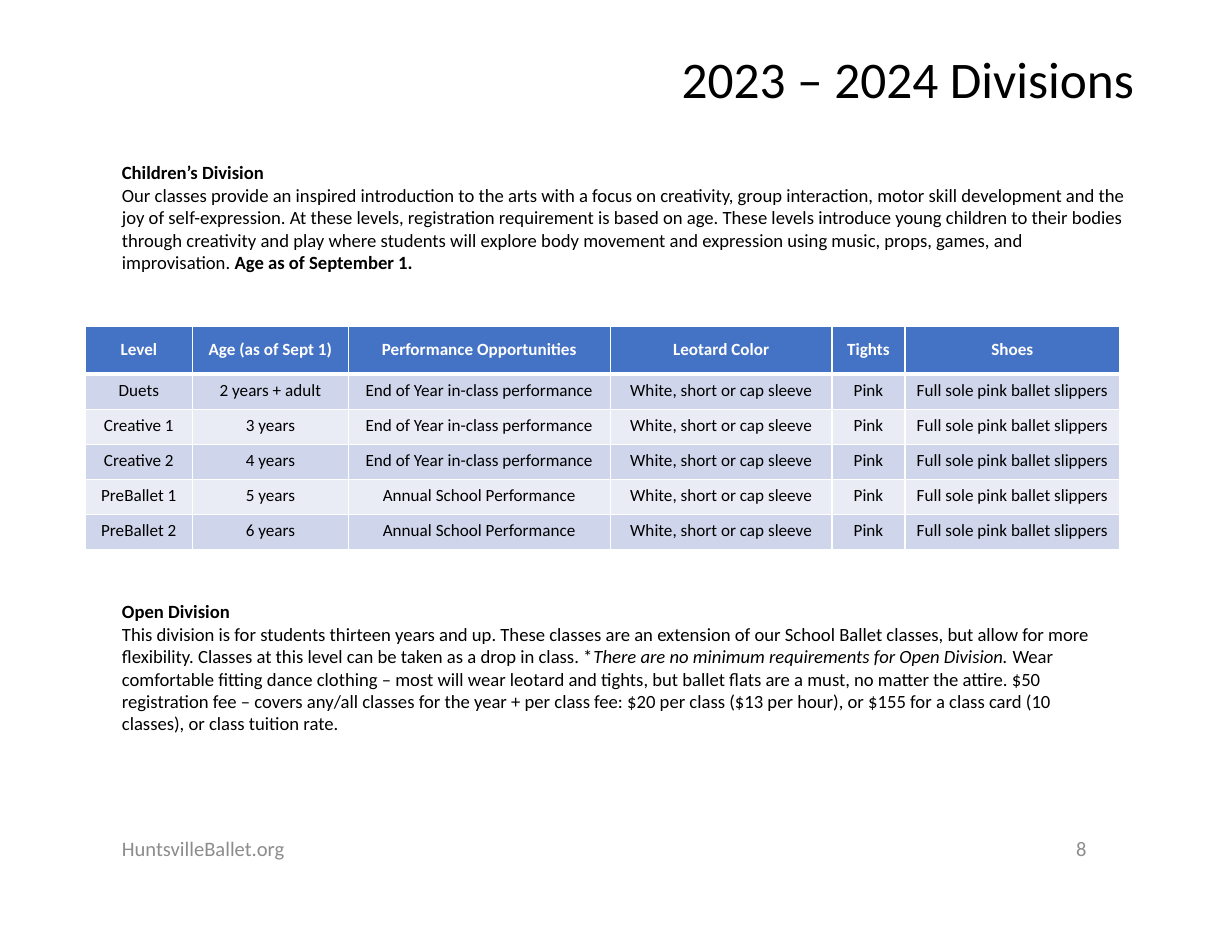
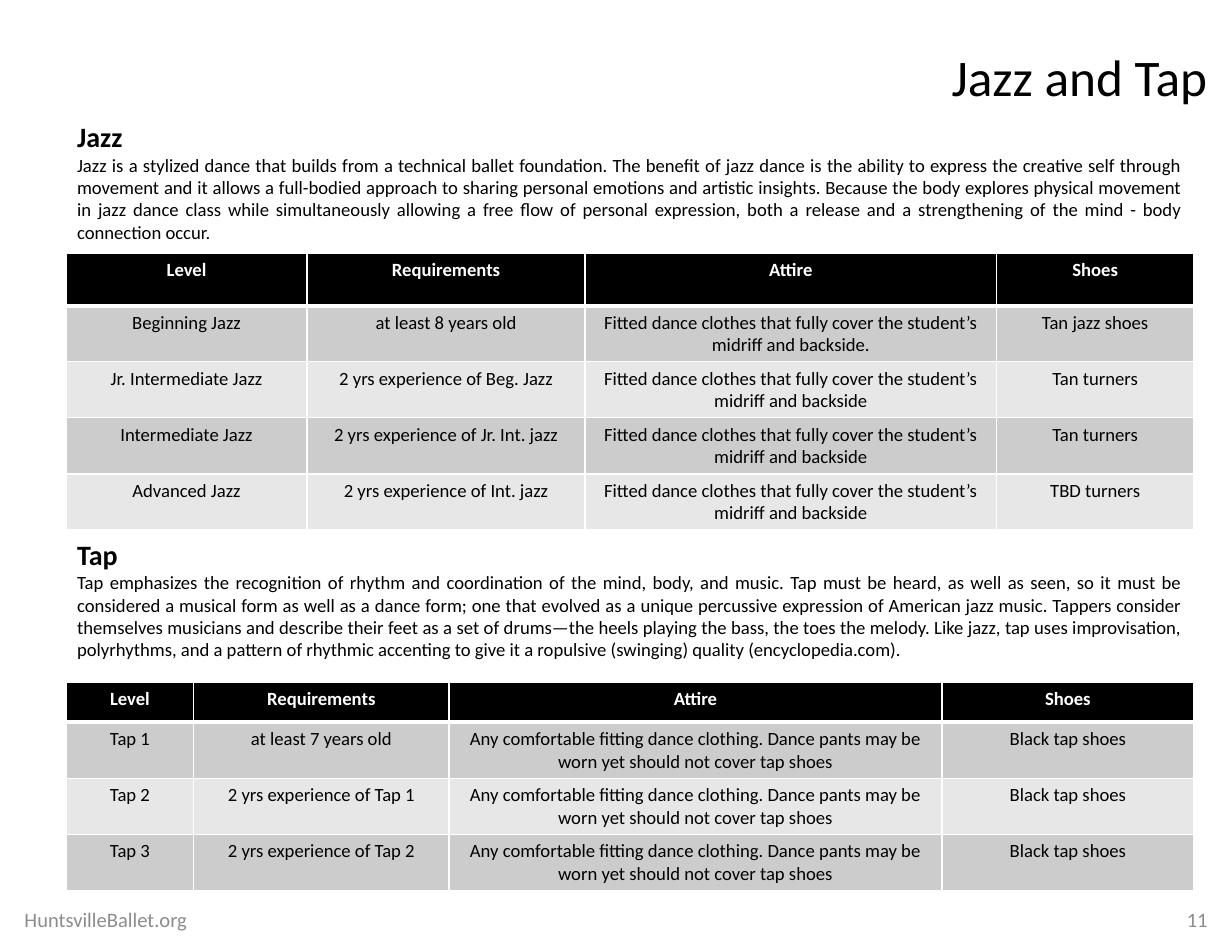
from lxml.etree import SubElement
from pptx import Presentation
from pptx.dml.color import RGBColor
from pptx.enum.text import MSO_ANCHOR, MSO_AUTO_SIZE, PP_ALIGN
from pptx.oxml.ns import qn
from pptx.util import Inches, Pt

BLACK = RGBColor(0x00, 0x00, 0x00)
WHITE = RGBColor(0xFF, 0xFF, 0xFF)
GREY = RGBColor(0x8C, 0x8C, 0x8C)
BLUE_SCHEME = (
    RGBColor(0x44, 0x72, 0xC4),
    RGBColor(0xCF, 0xD5, 0xEA),
    RGBColor(0xE9, 0xEB, 0xF5),
)
BLACK_SCHEME = (BLACK, RGBColor(0xCC, 0xCC, 0xCC), RGBColor(0xE7, 0xE7, 0xE7))

FONT = "Calibri"
GRID = Inches(0.25)
COLUMNS, ROWS = 44, 34
TITLE_ONLY = 5


def on_grid(*lengths):
    return [round(length * GRID) for length in lengths]


class Handbook:
    def __init__(self):
        self.presentation = Presentation()
        self.presentation.slide_width, self.presentation.slide_height = on_grid(COLUMNS, ROWS)
        self.slide = None

    def style(self, paragraph, size, color=BLACK, bold=None, align=PP_ALIGN.LEFT):
        paragraph.alignment = align
        paragraph.font.name = FONT
        paragraph.font.size = Pt(size)
        paragraph.font.color.rgb = color
        paragraph.font.bold = bold

    def add_slide(self, title, place):
        layout = self.presentation.slide_layouts[TITLE_ONLY]
        self.slide = self.presentation.slides.add_slide(layout)
        shape = self.slide.shapes.title
        shape.left, shape.top, shape.width, shape.height = on_grid(*place)
        frame = shape.text_frame
        frame.text = title
        frame.auto_size = MSO_AUTO_SIZE.NONE
        frame.vertical_anchor = MSO_ANCHOR.MIDDLE
        paragraph = frame.paragraphs[0]
        paragraph.line_spacing = 0.9
        self.style(paragraph, 33, align=PP_ALIGN.RIGHT)

    def text_box(self, place, anchor=MSO_ANCHOR.TOP):
        frame = self.slide.shapes.add_textbox(*on_grid(*place)).text_frame
        frame.word_wrap = True
        frame.vertical_anchor = anchor
        return frame

    def footer(self, number, margin, top, height, widths):
        site_width, number_width = widths
        entries = (
            ("HuntsvilleBallet.org", margin[0], site_width, PP_ALIGN.LEFT),
            (number, COLUMNS - margin[1] - number_width, number_width, PP_ALIGN.RIGHT),
        )
        for text, left, width, align in entries:
            frame = self.text_box((left, top, width, height), MSO_ANCHOR.MIDDLE)
            frame.text = text
            self.style(frame.paragraphs[0], 13.2, GREY, align=align)

    def section(self, place, heading, runs, heading_size=12, align=PP_ALIGN.LEFT):
        frame = self.text_box(place)
        frame.text = heading
        self.style(frame.paragraphs[0], heading_size, bold=True)
        paragraph = frame.add_paragraph()
        self.style(paragraph, 12, align=align)
        for text, emphasis in runs:
            run = paragraph.add_run()
            run.text = text
            run.font.bold = emphasis == "bold"
            run.font.italic = emphasis == "italic"

    def borders(self, cell, top, bottom):
        properties = cell._tc.get_or_add_tcPr()
        for side, points in (("lnL", 1), ("lnR", 1), ("lnT", top), ("lnB", bottom)):
            line = SubElement(properties, qn(f"a:{side}"), w=str(Pt(points)))
            fill = SubElement(line, qn("a:solidFill"))
            SubElement(fill, qn("a:srgbClr"), val=str(WHITE))

    def table(self, place, weights, header_height, records, scheme, size=12,
              header_anchor=MSO_ANCHOR.TOP):
        left, top, width, height = on_grid(*place)
        shape = self.slide.shapes.add_table(
            len(records), len(weights), left, top, width, height)
        table = shape.table
        for column, weight in zip(table.columns, weights):
            column.width = round(width * weight / sum(weights))
        header = round(header_height * GRID)
        for index, row in enumerate(table.rows):
            row.height = header if index == 0 else (height - header) // (len(records) - 1)
        header_fill, odd_fill, even_fill = scheme
        for index, record in enumerate(records):
            is_header = index == 0
            fill = header_fill if is_header else odd_fill if index % 2 else even_fill
            for cell, text in zip(table.rows[index].cells, record):
                self.borders(cell, 3 if index == 1 else 1, 3 if is_header else 1)
                cell.fill.solid()
                cell.fill.fore_color.rgb = fill
                cell.vertical_anchor = header_anchor if is_header else MSO_ANCHOR.TOP
                cell.text = text
                self.style(cell.text_frame.paragraphs[0], size,
                           WHITE if is_header else BLACK, is_header, PP_ALIGN.CENTER)


def add_divisions(handbook):
    handbook.add_slide("2023 – 2024 Divisions", (16.2, 0.76, 24.72, 4.32))
    handbook.footer("8", (3.96, 4.8), 29.48, 1.6, (13.52, 9))
    handbook.section((3.96, 5.56, 36.96, 4.44), "Children’s Division", [
        ("Our classes provide an inspired introduction to the arts with a focus on "
         "creativity, group interaction, motor skill development and the joy of "
         "self-expression. At these levels, registration requirement is based on age. "
         "These levels introduce young children to their bodies through creativity and "
         "play where students will explore body movement and expression using music, "
         "props, games, and improvisation. ", None),
        ("Age as of September 1.", "bold"),
    ])
    in_class = "End of Year in-class performance"
    annual = "Annual School Performance"
    levels = [
        ("Duets", "2 years + adult", in_class),
        ("Creative 1", "3 years", in_class),
        ("Creative 2", "4 years", in_class),
        ("PreBallet 1", "5 years", annual),
        ("PreBallet 2", "6 years", annual),
    ]
    attire = ("White, short or cap sleeve", "Pink", "Full sole pink ballet slippers")
    header = ("Level", "Age (as of Sept 1)", "Performance Opportunities",
              "Leotard Color", "Tights", "Shoes")
    handbook.table((3.04, 11.64, 36.96, 8), (0.96, 1.39, 2.34, 1.98, 0.65, 1.92), 1.72,
                   [header] + [level + attire for level in levels],
                   BLUE_SCHEME, 11, MSO_ANCHOR.MIDDLE)
    handbook.section((3.96, 21.24, 36.04, 5.24), "Open Division", [
        ("This division is for students thirteen years and up. These classes are an "
         "extension of our School Ballet classes, but allow for more flexibility. "
         "Classes at this level can be taken as a drop in class. *", None),
        ("There are no minimum requirements for Open Division. ", "italic"),
        ("Wear comfortable fitting dance clothing – most will wear leotard and tights, "
         "but ballet flats are a must, no matter the attire. $50 registration fee – "
         "covers any/all classes for the year + per class fee: $20 per class ($13 per "
         "hour), or $155 for a class card (10 classes), or class tuition rate.", None),
    ])


def add_jazz_and_tap(handbook):
    left, width = 2.36, 40.28
    header = ("Level", "Requirements", "Attire", "Shoes")
    handbook.add_slide("Jazz and Tap", (20.68, 1.04, 22.84, 3.64))
    handbook.footer("11", (0.48, 0.48), 31.92, 1.8, (14.84, 9.92))
    handbook.section((left, 4.08, width, 4.84), "Jazz", [
        ("Jazz is a stylized dance that builds from a technical ballet foundation. The "
         "benefit of jazz dance is the ability to express the creative self through "
         "movement and it allows a full-bodied approach to sharing personal emotions and "
         "artistic insights. Because the body explores physical movement in jazz dance "
         "class while simultaneously allowing a free flow of personal expression, both a "
         "release and a strengthening of the mind - body connection occur.", None),
    ], 18, PP_ALIGN.JUSTIFY)
    fitted = "Fitted dance clothes that fully cover the student’s midriff and backside"
    handbook.table((left, 9.04, width, 9.88), (2.15, 2.48, 3.67, 1.76), 1.88, [
        header,
        ("Beginning Jazz", "at least 8 years old", fitted + ".", "Tan jazz shoes"),
        ("Jr. Intermediate Jazz", "2 yrs experience of Beg. Jazz", fitted, "Tan turners"),
        ("Intermediate Jazz", "2 yrs experience of Jr. Int. jazz", fitted, "Tan turners"),
        ("Advanced Jazz", "2 yrs experience of Int. jazz", fitted, "TBD turners"),
    ], BLACK_SCHEME)
    handbook.section((left, 19, width, 4.84), "Tap", [
        ("Tap emphasizes the recognition of rhythm and coordination of the mind, body, "
         "and music. Tap must be heard, as well as seen, so it must be considered a "
         "musical form as well as a dance form; one that evolved as a unique percussive "
         "expression of American jazz music. Tappers consider themselves musicians and "
         "describe their feet as a set of drums—the heels playing the bass, the toes the "
         "melody. Like jazz, tap uses improvisation, polyrhythms, and a pattern of "
         "rhythmic accenting to give it a ropulsive (swinging) quality "
         "(encyclopedia.com).", None),
    ], 18, PP_ALIGN.JUSTIFY)
    requirements = ("at least 7 years old", "2 yrs experience of Tap 1",
                    "2 yrs experience of Tap 2")
    comfortable = ("Any comfortable fitting dance clothing. Dance pants may be worn "
                   "yet should not cover tap shoes")
    handbook.table((left, 24.36, width, 7.44), (1.14, 2.28, 4.4, 2.25), 1.44, [header] + [
        (f"Tap {level}", requirement, comfortable, "Black tap shoes")
        for level, requirement in enumerate(requirements, 1)
    ], BLACK_SCHEME)


def main():
    handbook = Handbook()
    add_divisions(handbook)
    add_jazz_and_tap(handbook)
    handbook.presentation.save("out.pptx")


if __name__ == "__main__":
    main()
